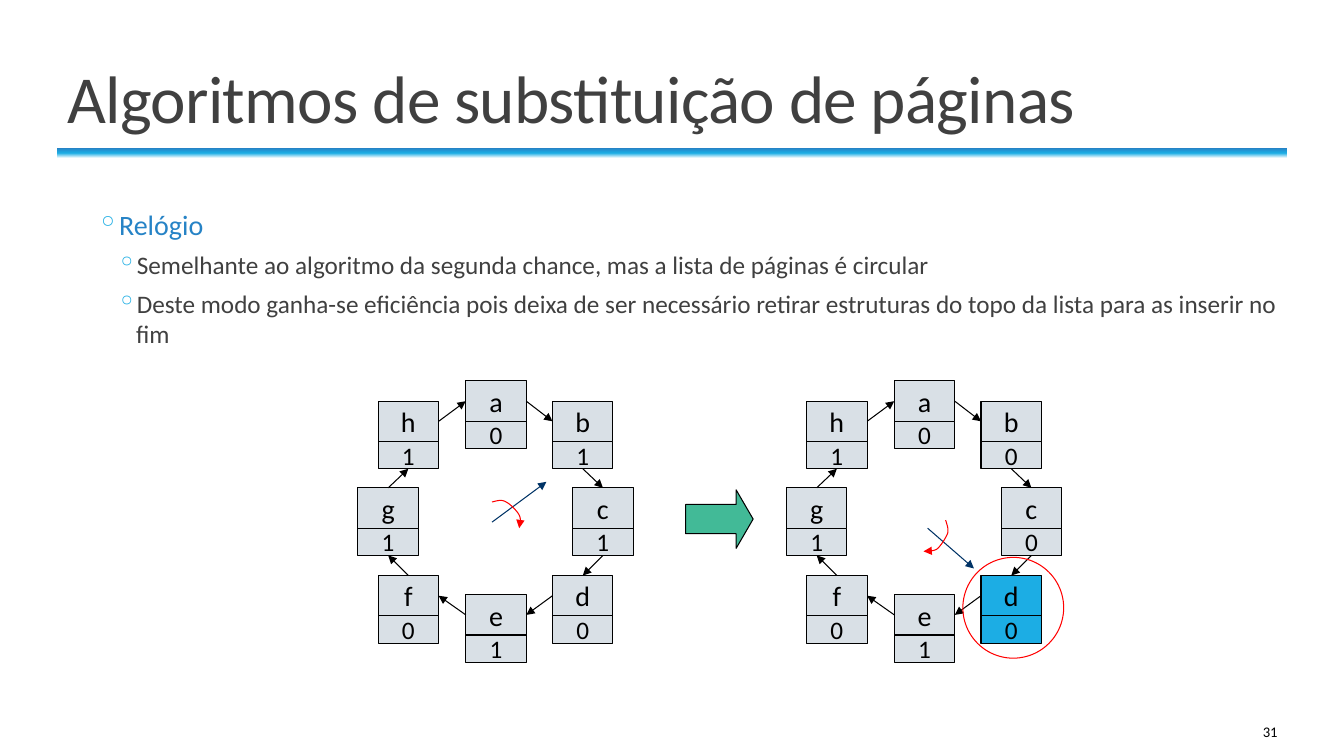
from lxml.etree import SubElement
from pptx import Presentation
from pptx.dml.color import RGBColor
from pptx.enum.shapes import MSO_CONNECTOR, MSO_SHAPE
from pptx.enum.text import MSO_ANCHOR, PP_ALIGN
from pptx.oxml import parse_xml
from pptx.oxml.ns import nsdecls, qn
from pptx.util import Inches, Pt

HUES = {
    "black": "000000", "gray": "404040", "white": "FFFFFF", "sky": "1CADE4",
    "blue": "2683C6", "pale": "D9E0E6", "navy": "003366", "red": "FF0000",
    "green": "42BA97",
}
RGB = {name: RGBColor.from_string(code) for name, code in HUES.items()}


def write(box, text, size, hue="black", align=PP_ALIGN.LEFT,
          anchor=MSO_ANCHOR.MIDDLE, wrap=True, inset=(0.1, 0.05),
          lead=None, track=None, bullet=None):
    """Add a paragraph to box; bullet is its (margin, indent) in inches."""
    frame = box.text_frame
    frame.word_wrap, frame.vertical_anchor = wrap, anchor
    frame.margin_left = frame.margin_right = Inches(inset[0])
    frame.margin_top = frame.margin_bottom = Inches(inset[1])
    para = frame.paragraphs[0] if not frame.text else frame.add_paragraph()
    para.alignment, para.line_spacing = align, lead
    run = para.add_run()
    run.text = text
    run.font.size, run.font.name = Pt(size), "Calibri"
    run.font.color.rgb = RGB[hue]
    if track:
        run.font._element.set("spc", str(int(track * 100)))
    if bullet:
        para.space_before, para.space_after = Pt(2), Pt(4)
        props = para._p.get_or_add_pPr()
        props.set("marL", str(Inches(bullet[0])))
        props.set("indent", str(Inches(bullet[1])))
        tint = SubElement(props, qn("a:buClr"))
        SubElement(tint, qn("a:srgbClr"), val=HUES["sky"])
        SubElement(props, qn("a:buChar"), char="◦")


def style(shape, line, fill=None, head=False):
    """Set outline and fill, drop the shadow, add an arrowhead if asked."""
    shape.line.color.rgb, shape.line.width = RGB[line], Pt(0.75)
    if fill:
        shape.fill.solid()
        shape.fill.fore_color.rgb = RGB[fill]
    if head:
        SubElement(shape.line._get_or_add_ln(), qn("a:tailEnd"), type="triangle")
    SubElement(shape._element.spPr, qn("a:effectLst"))


deck = Presentation()
deck.slide_width, deck.slide_height = Inches(13.33), Inches(7.5)
shapes = deck.slides.add_slide(deck.slide_layouts[6]).shapes

# Rule under the title
rule = shapes.add_shape(MSO_SHAPE.RECTANGLE, Inches(0.57), Inches(1.47),
                        Inches(12.2), Inches(0.1))
rule.shadow.inherit = False
rule.line.fill.background()
stops = "".join(
    f'<a:gs pos="{spot * 1000}"><a:srgbClr val="{HUES[hue]}"/></a:gs>'
    for spot, hue in ((0, "white"), (50, "sky"), (100, "blue")))
rule._element.spPr.find(qn("a:prstGeom")).addnext(parse_xml(
    f'<a:gradFill {nsdecls("a")}><a:gsLst>{stops}</a:gsLst>'
    '<a:lin ang="16200000" scaled="0"/></a:gradFill>'))

# Title, page number and body
title = shapes.add_textbox(Inches(0.57), Inches(0.29), Inches(12.2), Inches(1.12))
write(title, "Algoritmos de substituição de páginas", 48, "gray",
      anchor=MSO_ANCHOR.BOTTOM, lead=0.85, track=-0.5)
number = shapes.add_textbox(Inches(10.83), Inches(7.06), Inches(1.94), Inches(0.4))
write(number, "31", 10.5, align=PP_ALIGN.RIGHT)
body = shapes.add_textbox(Inches(0.57), Inches(2.01), Inches(12.2), Inches(4.82))
for text, size, hue, bullet in (
    ("Relógio", 20, "blue", (0.59, -0.2)),
    ("Semelhante ao algoritmo da segunda chance, mas a lista de páginas é circular",
     18, "gray", (0.78, -0.19)),
    ("Deste modo ganha-se eficiência pois deixa de ser necessário retirar "
     "estruturas do topo da lista para as inserir no fim",
     18, "gray", (0.78, -0.19)),
):
    write(body, text, size, hue, anchor=MSO_ANCHOR.TOP, inset=(0, 0.05),
          bullet=bullet)

# Rings of pages: place of each page, and the side its arrow leaves from
TOP, LEFT, BOTTOM, RIGHT = range(4)
PAGES = (
    ("a", 1.07, 0, RIGHT), ("b", 1.93, 0.2, BOTTOM),
    ("c", 2.13, 1.06, BOTTOM), ("d", 1.93, 1.93, LEFT),
    ("e", 1.07, 2.12, LEFT), ("f", 0.2, 1.93, TOP),
    ("g", 0, 1.06, TOP), ("h", 0.2, 0.2, RIGHT),
)
for start, bits, chosen in ((3.55, "01101011", None), (7.8, "00001011", "d")):
    ring = []
    for (page, x, y, side), bit in zip(PAGES, bits):
        fill = "sky" if page == chosen else "pale"
        pair = []
        for text, size, drop, tall in ((page, 20, 0, 0.4), (bit, 18, 0.4, 0.27)):
            cell = shapes.add_shape(
                MSO_SHAPE.RECTANGLE, Inches(start + x), Inches(3.78 + y + drop),
                Inches(0.6), Inches(tall))
            style(cell, "black", fill)
            write(cell, text, size, align=PP_ALIGN.CENTER, wrap=False, inset=(0, 0))
            pair.append(cell)
        ring.append(pair)
    for i, (page, x, y, side) in enumerate(PAGES):
        into = (side + 2) % 4
        link = shapes.add_connector(MSO_CONNECTOR.STRAIGHT, 0, 0, 0, 0)
        link.begin_connect(ring[i][side == BOTTOM], side)
        link.end_connect(ring[(i + 1) % 8][into == BOTTOM], into)
        style(link, "black", head=True)

# Clock hands, each with a curved arrow made of Bézier arcs
HANDS = (
    ((4.88, 5.18, 5.42, 4.78),
     ((4.88, 4.98), (4.93, 4.97), (4.97, 4.95), (5.02, 4.98), (5.06, 5),
      (5.13, 5.07), (5.15, 5.11), (5.17, 5.15), (5.16, 5.2), (5.15, 5.24))),
    ((9.2, 5.24, 9.66, 5.64),
     ((9.38, 5.16), (9.39, 5.2), (9.41, 5.24), (9.4, 5.29), (9.38, 5.34),
      (9.33, 5.42), (9.29, 5.45), (9.25, 5.47), (9.2, 5.47), (9.16, 5.47))),
)
STEPS = 8
for ends, knots in HANDS:
    hand = shapes.add_connector(MSO_CONNECTOR.STRAIGHT, *map(Inches, ends))
    style(hand, "navy", head=True)
    trail = []
    for k in range(0, len(knots) - 1, 3):
        for step in range(1, STEPS + 1):
            t = step / STEPS
            parts = ((1 - t) ** 3, 3 * t * (1 - t) ** 2, 3 * t * t * (1 - t), t ** 3)
            trail.append([Inches(sum(p * v for p, v in zip(parts, axis)))
                          for axis in zip(*knots[k:k + 4])])
    pen = shapes.build_freeform(*map(Inches, knots[0]))
    pen.add_line_segments(trail, close=False)
    sweep = pen.convert_to_shape()
    sweep.fill.background()
    style(sweep, "red", head=True)

# Arrow between the rings, and the mark around the chosen page
arrow = shapes.add_shape(MSO_SHAPE.RIGHT_ARROW, Inches(6.8), Inches(4.86),
                         Inches(0.67), Inches(0.58))
arrow.adjustments[1] = 0.29
style(arrow, "black", "green")
mark = shapes.add_shape(MSO_SHAPE.OVAL, Inches(9.55), Inches(5.53),
                        Inches(1), Inches(1))
mark.fill.background()
style(mark, "red")

deck.save("out.pptx")
